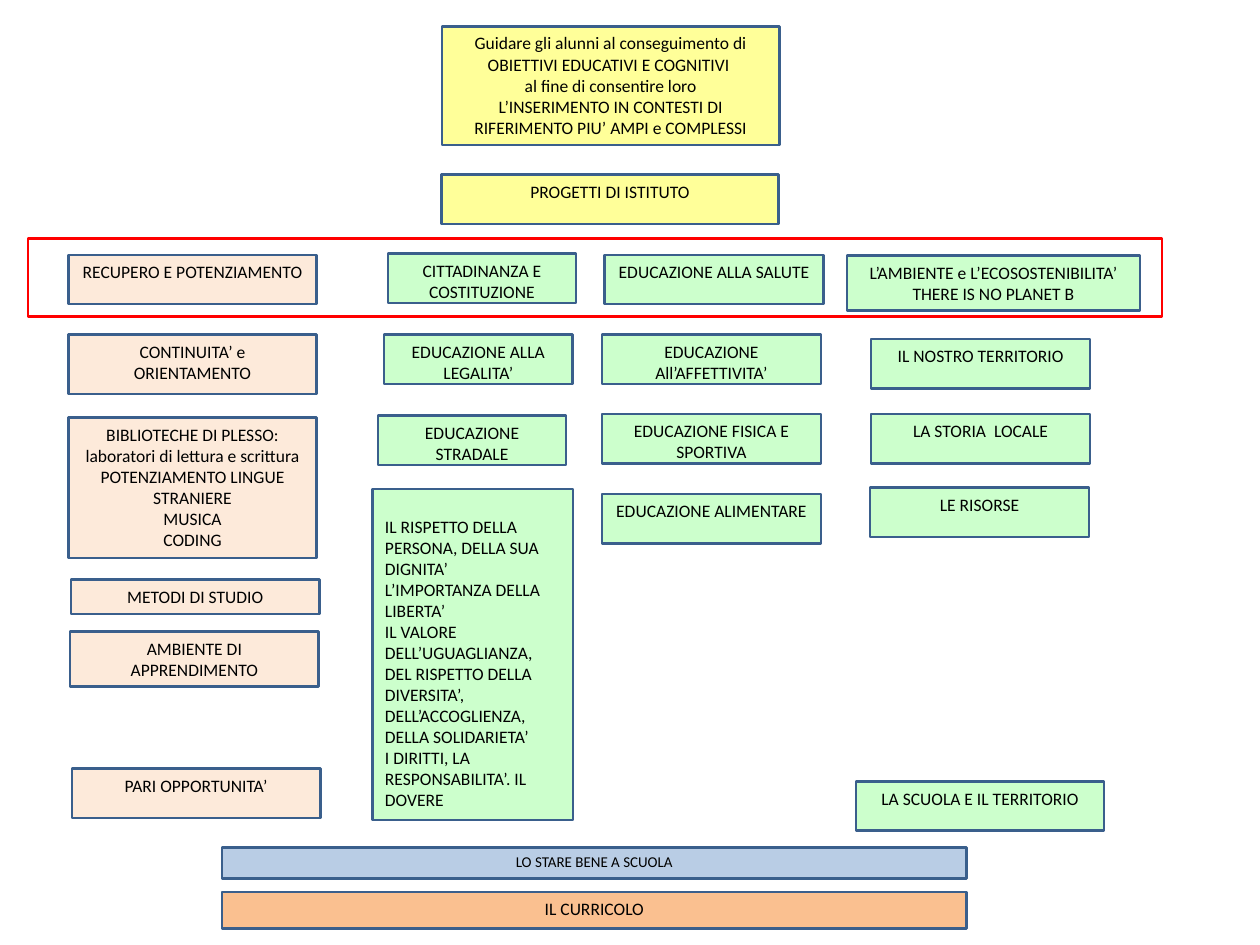
from pptx import Presentation, util as u
from pptx.dml.color import RGBColor
from pptx.enum import shapes, text

YELLOW, PEACH, GREEN = "FFFF99", "FDEADA", "CCFFCC"
BLUE, ORANGE = "B9CDE5", "FAC090"
OUTLINE, RED, BLACK = "3A5F8C", "FF0000", "000000"
ROW = 39.6  # usual box height


def color(value):
    return RGBColor.from_string(value)


class Chart:
    """Style and current slide of the project map."""

    font = {"name": "Calibri", "size": u.Pt(14), "bold": False}
    frame = {
        "margin_left": u.Pt(10), "margin_right": u.Pt(10),
        "margin_top": u.Pt(5), "margin_bottom": u.Pt(5),
        "word_wrap": True, "vertical_anchor": text.MSO_ANCHOR.TOP,
    }

    def __init__(self, page):
        self.page = page

    def outline(self, left, top, width, height, line=OUTLINE):
        box = self.page.shapes.add_shape(
            shapes.MSO_SHAPE.RECTANGLE,
            u.Pt(left), u.Pt(top), u.Pt(width), u.Pt(height))
        box.shadow.inherit = False
        box.fill.background()
        box.line.color.rgb = color(line)
        box.line.width = u.Pt(2)
        return box

    def box(self, left, top, width, height, fill, lines,
            align=text.PP_ALIGN.CENTER, font=None, frame=None):
        box = self.outline(left, top, width, height)
        box.fill.solid()
        box.fill.fore_color.rgb = color(fill)
        for name, value in {**self.frame, **(frame or {})}.items():
            setattr(box.text_frame, name, value)
        box.text_frame.text = "\n".join(lines)
        for para in box.text_frame.paragraphs:
            para.alignment = align
            for name, value in {**self.font, **(font or {})}.items():
                setattr(para.font, name, value)
            para.font.color.rgb = color(BLACK)

    def column(self, width, fill, items):
        for left, top, height, *lines in items:
            self.box(left, top, width, height, fill, lines)


def main():
    deck = Presentation()
    deck.slide_width, deck.slide_height = u.Pt(1008), u.Pt(756)
    chart = Chart(deck.slides.add_slide(deck.slide_layouts[6]))

    # Aim and institute projects
    chart.column(270, YELLOW, [
        (353.5, 21, 95,
         "Guidare gli alunni al conseguimento di OBIETTIVI EDUCATIVI E COGNITIVI ",
         "al fine di consentire loro",
         "L’INSERIMENTO IN CONTESTI DI RIFERIMENTO PIU’ AMPI e COMPLESSI"),
        (353, 139.7, ROW, "PROGETTI DI ISTITUTO"),
    ])

    # Recovery and strengthening
    chart.column(198.7, PEACH, [
        (54.7, 203.8, ROW, "RECUPERO E POTENZIAMENTO"),
        (54.7, 267.8, 47.5, "CONTINUITA’ e ORIENTAMENTO"),
        (54.7, 334, 112.3,
         "BIBLIOTECHE DI PLESSO: laboratori di lettura e scrittura",
         "POTENZIAMENTO LINGUE STRANIERE", "MUSICA", "CODING"),
        (56.9, 463.7, 27.4, "METODI DI STUDIO"),
        (56.2, 505.4, 44, "AMBIENTE DI APPRENDIMENTO"),
        (57.6, 614.9, ROW, "PARI OPPORTUNITA’"),
    ])

    # Citizenship
    chart.column(150.5, GREEN, [
        (310.3, 203, ROW, "CITTADINANZA E COSTITUZIONE"),
        (307.4, 267.8, ROW, "EDUCAZIONE ALLA LEGALITA’"),
        (302.4, 332.6, ROW, "EDUCAZIONE STRADALE"),
    ])
    chart.box(298, 391, 160.6, 265, GREEN, [
        "IL RISPETTO DELLA PERSONA, DELLA SUA DIGNITA’",
        "L’IMPORTANZA DELLA LIBERTA’",
        "IL VALORE DELL’UGUAGLIANZA, DEL RISPETTO DELLA DIVERSITA’, "
        "DELL’ACCOGLIENZA, DELLA SOLIDARIETA’",
        "I DIRITTI, LA RESPONSABILITA’. IL DOVERE",
    ], align=text.PP_ALIGN.LEFT, frame={"margin_top": u.Pt(22)})

    # Health
    chart.column(175, GREEN, [
        (483.8, 203.8, ROW, "EDUCAZIONE ALLA SALUTE"),
        (481.7, 267.8, ROW, "EDUCAZIONE All’AFFETTIVITA’"),
        (481.7, 331.2, ROW, "EDUCAZIONE FISICA E SPORTIVA"),
        (481.7, 395.3, ROW, "EDUCAZIONE ALIMENTARE"),
    ])

    # Environment and territory
    chart.box(677.5, 204.5, 234.7, 44, GREEN,
              ["L’AMBIENTE e L’ECOSOSTENIBILITA’", "THERE IS NO PLANET B"])
    chart.column(175, GREEN, [
        (697, 271.4, ROW, "IL NOSTRO TERRITORIO"),
        (697, 331.2, ROW, "LA STORIA  LOCALE"),
        (696.2, 390.2, ROW, "LE RISORSE"),
    ])
    chart.box(684.7, 625, 198.7, ROW, GREEN, ["LA SCUOLA E IL TERRITORIO"])

    # Frame around the main themes
    chart.outline(22.3, 190.8, 907.2, 62.6, RED)

    # Shared foundations
    chart.box(177.8, 678.2, 595.4, 24.5, BLUE, ["LO STARE BENE A SCUOLA"],
              font={"size": u.Pt(12)}, frame={"margin_top": u.Pt(3.6)})
    chart.box(177.8, 713.5, 595.4, 29.5, ORANGE, ["IL CURRICOLO"])

    deck.save("out.pptx")


if __name__ == "__main__":
    main()
